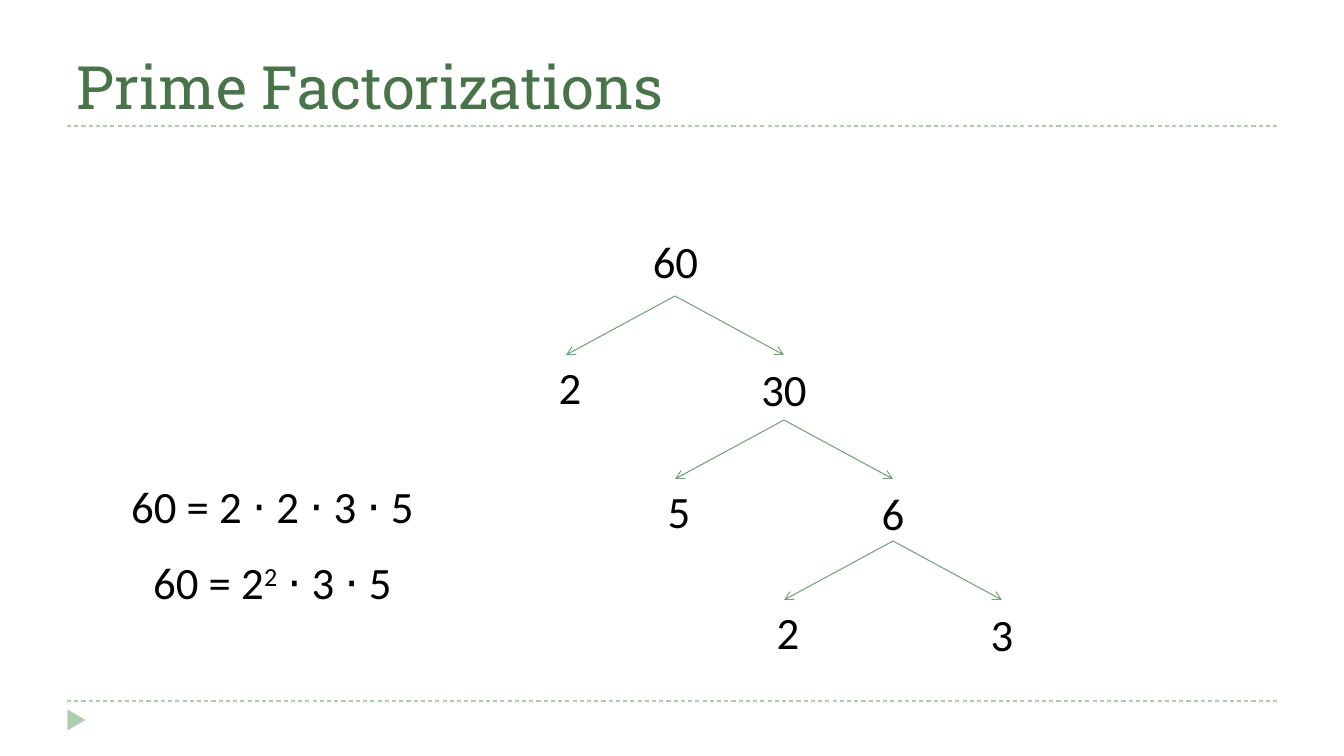
"""Build the prime factorization tree slide."""
from lxml.etree import SubElement
from pptx import Presentation
from pptx.dml.color import RGBColor
from pptx.enum.dml import MSO_LINE
from pptx.enum.shapes import MSO_CONNECTOR, MSO_SHAPE
from pptx.enum.text import MSO_ANCHOR, PP_ALIGN
from pptx.oxml.ns import qn
from pptx.util import Pt

EMU_PER_PX = 914400 / 100.8
SLIDE_SIZE = (1344, 756)
TITLE = "Prime Factorizations"
ROOT = ("60", (222, 229, 907, 68))
BRANCHES = [
    (296, "2", "30"),
    (420, "5", "6"),
    (541, "2", "3"),
]
EQUATIONS = [
    ((67, 550, 411, 120), [("60 = 2", 0), ("2", 30000), (" ⋅ 3 ⋅ 5", 0)]),
    ((67, 474, 411, 71), [("60 = 2 ⋅ 2 ⋅ 3 ⋅ 5", 0)]),
]
RULE_YS = (701, 126)
RULE_LEFT, RULE_RIGHT = 67, 1277
MARKER = (66, 711, 21, 18)
APEX_X, SPREAD, DROP = 675, 109, 59
LABEL_W, LABEL_H = 76, 68
LEFT_NUDGE, RIGHT_NUDGE = 4, 2
DARK, GREEN, PALE, BLACK = "4B734B", "72A376", "B0CCB0", "000000"


def px(n):
    return round(n * EMU_PER_PX)


def color(value):
    return RGBColor.from_string(value)


def add_text(s, box, runs, size=32, font="Calibri", fill=BLACK,
             align=PP_ALIGN.CENTER, anchor=MSO_ANCHOR.TOP):
    tf = s.shapes.add_textbox(*map(px, box)).text_frame
    tf.word_wrap = True
    tf.vertical_anchor = anchor
    p = tf.paragraphs[0]
    p.alignment = align
    for text, baseline in runs:
        r = p.add_run()
        r.text = text
        r.font.size = Pt(size)
        r.font.name = font
        r.font.color.rgb = color(fill)
        if baseline:
            r.font._element.set("baseline", str(baseline))


def add_line(s, start, end, fill):
    line = s.shapes.add_connector(MSO_CONNECTOR.STRAIGHT, *map(px, start + end))
    line.line.color.rgb = color(fill)
    line.line.width = Pt(0.75)
    SubElement(line._element.spPr, qn("a:effectLst"))
    return line


def add_arrow(s, start, end):
    line = add_line(s, start, end, GREEN)
    SubElement(line.line._get_or_add_ln(), qn("a:tailEnd"), type="arrow")


def add_label(s, center, top, text):
    add_text(s, (center - LABEL_W / 2, top, LABEL_W, LABEL_H), [(text, 0)])


def main():
    prs = Presentation()
    prs.slide_width, prs.slide_height = map(px, SLIDE_SIZE)
    s = prs.slides.add_slide(prs.slide_layouts[6])

    for y in RULE_YS:
        rule = add_line(s, (RULE_LEFT, y), (RULE_RIGHT, y), PALE)
        rule.line.dash_style = MSO_LINE.DASH
    sp = s.shapes.add_shape(MSO_SHAPE.ISOSCELES_TRIANGLE, *map(px, MARKER))
    sp.rotation = 90
    sp.shadow.inherit = False
    sp.fill.solid()
    sp.fill.fore_color.rgb = color(PALE)
    sp.line.fill.background()

    add_text(s, (67, 17, 1210, 109), [(TITLE, 0)], 42.7, "Roboto Slab", DARK,
             PP_ALIGN.LEFT, MSO_ANCHOR.BOTTOM)

    root, root_box = ROOT
    add_text(s, root_box, [(root, 0)])
    for level, (y, prime, rest) in enumerate(BRANCHES):
        x = APEX_X + level * SPREAD
        left, right, bottom = x - SPREAD, x + SPREAD, y + DROP
        add_arrow(s, (x, y), (right, bottom))
        add_arrow(s, (x, y), (left, bottom))
        add_label(s, left + LEFT_NUDGE, bottom, prime)
        add_label(s, right, bottom + RIGHT_NUDGE, rest)

    for box, runs in EQUATIONS:
        add_text(s, box, runs)
    prs.save("out.pptx")


if __name__ == "__main__":
    main()
